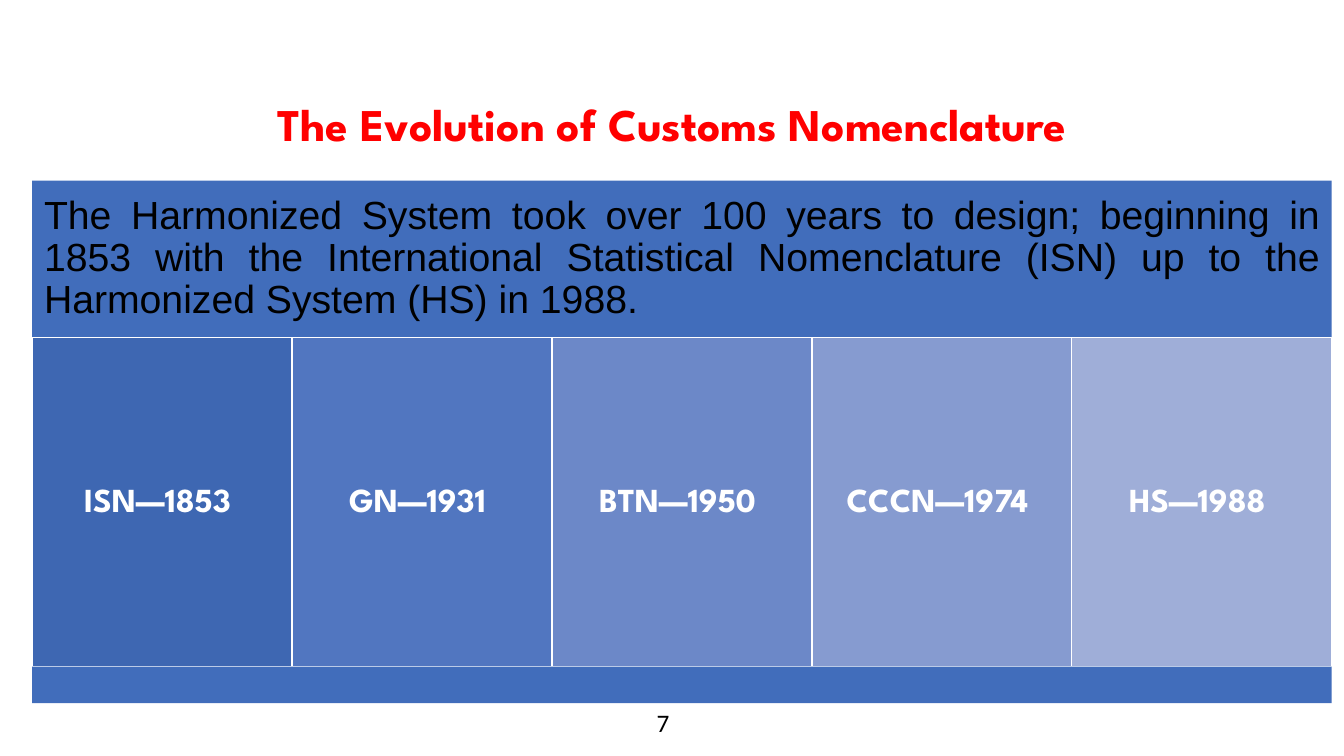
from pptx import Presentation
from pptx.dml.color import RGBColor
from pptx.enum import shapes, text
from pptx.util import Cm, Pt

RED = RGBColor(0xFF, 0, 0)
BLACK = RGBColor(0, 0, 0)
WHITE = RGBColor(0xFF, 0xFF, 0xFF)
BLUE = RGBColor(0x41, 0x6D, 0xBB)
STAGES = [
    ("ISN—1853 ", RGBColor(0x3E, 0x67, 0xB2)),
    ("GN—1931 ", RGBColor(0x51, 0x76, 0xC0)),
    ("BTN—1950 ", RGBColor(0x6C, 0x88, 0xC8)),
    ("CCCN—1974 ", RGBColor(0x86, 0x9B, 0xD0)),
    ("HS—1988 ", RGBColor(0x9F, 0xAE, 0xD8)),
]
INTRO = ("The Harmonized System took over 100 years to design; beginning in "
         "1853 with the International Statistical Nomenclature (ISN) up to "
         "the Harmonized System (HS) in 1988.")

ALIGN = text.PP_ALIGN
HEAD = {"name": "League Spartan", "size": Pt(32.4), "bold": True}
LABEL = {"name": "League Spartan", "size": Pt(24), "bold": True}
BODY = {"name": "Arial", "size": Pt(28), "bold": False}
PAGE = {"name": "Calibri", "size": Pt(18), "bold": False}


def write(shape, words, style, color, align, inset=0.25, space=0.9):
    """Fill a shape with one formatted paragraph; inset is in cm."""
    frame = shape.text_frame
    frame.word_wrap = True
    frame.auto_size = text.MSO_AUTO_SIZE.NONE
    frame.vertical_anchor = text.MSO_ANCHOR.MIDDLE
    for side in ("left", "right", "top", "bottom"):
        setattr(frame, "margin_" + side, Cm(inset))
    para = frame.paragraphs[0]
    para.alignment = align
    para.line_spacing = space
    run = para.add_run()
    run.text = words
    for key, value in style.items():
        setattr(run.font, key, value)
    run.font.color.rgb = color


def add_rect(slide, box, fill, line=None):
    rect = slide.shapes.add_shape(
        shapes.MSO_SHAPE.RECTANGLE, *(Cm(n) for n in box))
    rect.shadow.inherit = False
    rect.fill.solid()
    rect.fill.fore_color.rgb = fill
    if line is None:
        rect.line.fill.background()
    else:
        rect.line.color.rgb = line
        rect.line.width = Pt(1)
    return rect


def add_title(slide, box):
    title = slide.shapes.title
    title.left, title.top, title.width, title.height = (Cm(n) for n in box)
    write(title, "The Evolution of Customs Nomenclature", HEAD, RED,
          ALIGN.CENTER)


def add_banner(slide, box):
    write(add_rect(slide, box, BLUE), INTRO, BODY, BLACK, ALIGN.JUSTIFY, 0.3)


def add_stages(slide, box):
    left, top, width, height = box
    step = width / len(STAGES)
    for i, (label, fill) in enumerate(STAGES):
        cell = add_rect(slide, (left + i * step, top, step, height),
                        fill, WHITE)
        write(cell, label, LABEL, WHITE, ALIGN.CENTER)


def add_page(slide, box):
    page = slide.shapes.add_textbox(*(Cm(n) for n in box))
    write(page, "7", PAGE, BLACK, ALIGN.LEFT, space=1.0)


def main():
    deck = Presentation()
    deck.slide_width, deck.slide_height = Cm(33.87), Cm(19.05)
    slide = deck.slides.add_slide(deck.slide_layouts[5])
    left, width = 0.81, 32.75
    add_title(slide, (2.34, 2.57, 29.2, 1.27))
    add_banner(slide, (left, 4.55, width, 3.95))
    add_stages(slide, (left, 8.5, width, 8.3))
    add_rect(slide, (left, 16.8, width, 0.92), BLUE)
    add_page(slide, (16.3, 17.7, 1.37, 1.02))
    deck.save("out.pptx")


if __name__ == "__main__":
    main()
